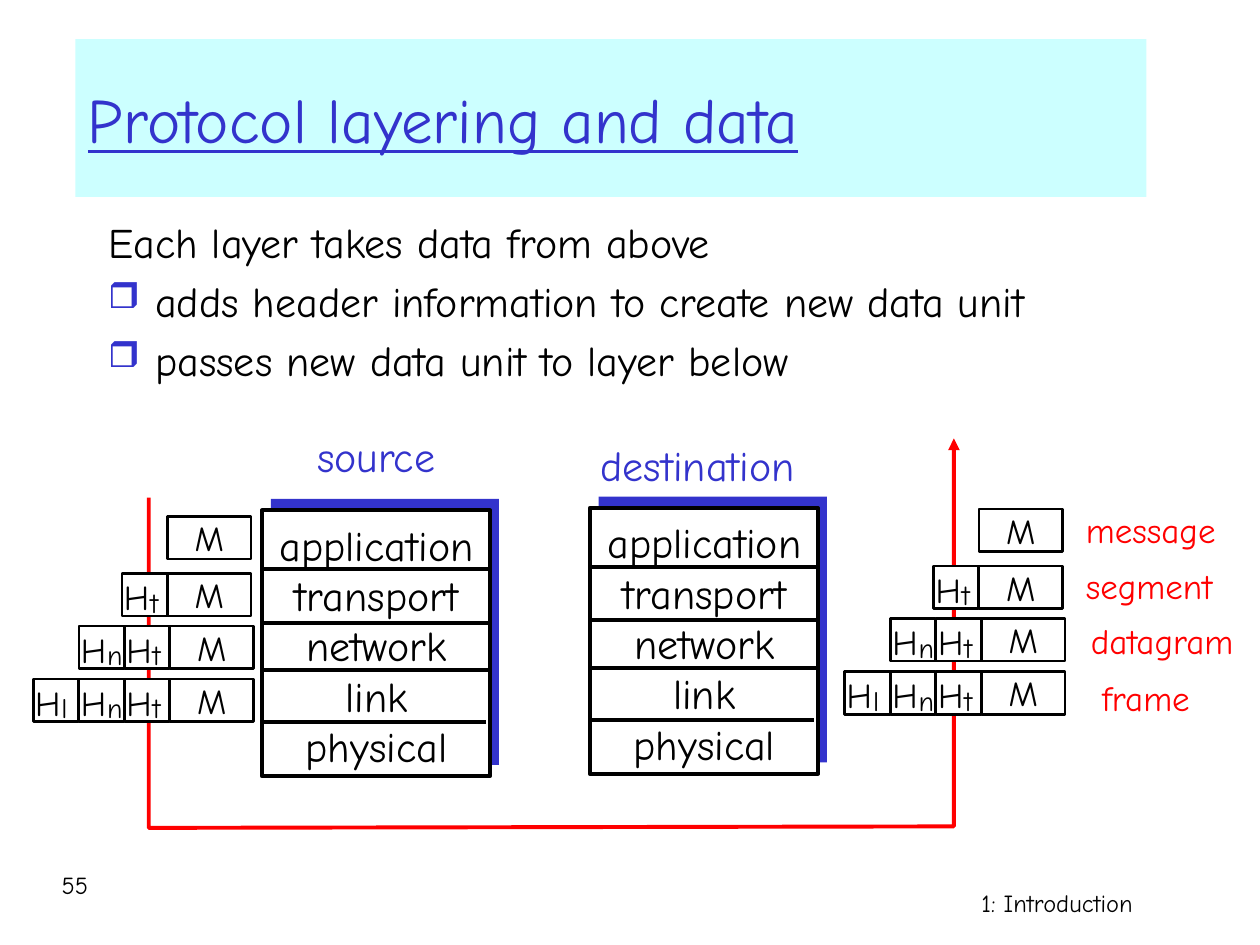
"""Build a slide on protocol layering and the data units of each layer."""
import pptx
import pptx.dml.color
import pptx.enum.shapes
import pptx.enum.text
import pptx.oxml
import pptx.oxml.ns
import pptx.util
from lxml import etree

Cm, Pt = pptx.util.Cm, pptx.util.Pt
RGBColor = pptx.dml.color.RGBColor
ALIGN = pptx.enum.text.PP_ALIGN
ANCHOR = pptx.enum.text.MSO_ANCHOR
qn = pptx.oxml.ns.qn

BLUE = RGBColor(0x33, 0x33, 0xCC)
CYAN = RGBColor(0xCC, 0xFF, 0xFF)
RED = RGBColor(0xFF, 0, 0)
BLACK = RGBColor(0, 0, 0)
WHITE = RGBColor(0xFF, 0xFF, 0xFF)
FONT = "Comic Neue"

TITLE = "Protocol layering and data"
BODY = [
    "Each layer takes data from above",
    "adds header information to create new data unit",
    "passes new data unit to layer below",
]
LAYERS = ["application", "transport", "network", "link", "physical"]
HOSTS = [
    ("source", (6.15, 8.56, 3.12, 1.27), (5.28, 10.29)),
    ("destination", (11.86, 8.74, 4.93, 1.27), (11.89, 10.24)),
]
DIVIDERS = [(0, 1.19), (0.05, 2.26), (0.05, 3.22), (-0.03, 4.27)]
PACKETS = [
    (3.38, 10.41, ""),
    (3.38, 11.56, "t"),
    (3.43, 12.62, "tn"),
    (3.43, 13.69, "tnl"),
]
PACKET_SHIFTS = [(0, 0), (16.36, -0.15)]
UNITS = [
    ("message", 21.64, 10.13, 3.25),
    ("segment", 21.64, 11.25, 3.25),
    ("datagram", 21.74, 12.37, 3.61),
    ("frame", 21.97, 13.51, 2.51),
]
ROUTE = [(3, 10.03), (3, 16.69), (19.23, 16.66), (19.23, 8.84)]
STACK_WIDTH, STACK_HEIGHT = 4.6, 5.36
MESSAGE_WIDTH, HEADER_WIDTH, PACKET_HEIGHT, HEADER_PITCH = 1.68, 0.91, 0.86, 0.92


def write_text(shape, lines, size=24, color=BLACK, align=ALIGN.LEFT,
               anchor=ANCHOR.TOP, wrap=False, underline=None, space=None):
    frame = shape.text_frame
    frame.word_wrap = wrap
    frame.vertical_anchor = anchor
    for index, line in enumerate(lines):
        paragraph = frame.add_paragraph() if index else frame.paragraphs[0]
        paragraph.alignment = align
        if space is not None:
            paragraph.space_before = Pt(space)
        run = paragraph.add_run()
        run.text = line
        run.font.name = FONT
        run.font.size = Pt(size)
        run.font.color.rgb = color
        run.font.underline = underline
    return frame


def add_label(shapes, box, lines, **text_format):
    label = shapes.add_textbox(*map(Cm, box))
    return write_text(label, lines, **text_format)


def add_rectangle(shapes, box, fill, line_width=None):
    rectangle = shapes.add_shape(
        pptx.enum.shapes.MSO_SHAPE.RECTANGLE, *map(Cm, box))
    rectangle.shadow.inherit = False
    rectangle.fill.solid()
    rectangle.fill.fore_color.rgb = fill
    if line_width:
        rectangle.line.color.rgb = BLACK
        rectangle.line.width = Pt(line_width)
    else:
        rectangle.line.fill.background()
    return rectangle


def add_bullet(paragraph):
    properties = paragraph._p.get_or_add_pPr()
    color = etree.SubElement(properties, qn("a:buClr"))
    etree.SubElement(color, qn("a:srgbClr"), val=str(BLUE))
    etree.SubElement(properties, qn("a:buSzPct"), val="85000")
    etree.SubElement(properties, qn("a:buChar"), char="❒")


def add_body(shapes):
    frame = add_label(shapes, (1.93, 4.24, 21.59, 4.22), BODY, wrap=True, space=4.8)
    for index, paragraph in enumerate(frame.paragraphs):
        properties = paragraph._p.get_or_add_pPr()
        properties.set("marL", str(Cm(0.95)))
        properties.set("indent", str(-Cm(0.95)))
        if index:
            add_bullet(paragraph)


def add_stack(shapes, left, top):
    add_rectangle(shapes, (left + 0.18, top - 0.23, STACK_WIDTH, STACK_HEIGHT), BLUE)
    add_rectangle(shapes, (left, top, STACK_WIDTH, STACK_HEIGHT), WHITE, 2.25)
    for x, y in DIVIDERS:
        ends = (left + x, top + y, left + x + 4.55, top + y)
        divider = shapes.add_connector(
            pptx.enum.shapes.MSO_CONNECTOR.STRAIGHT, *map(Cm, ends))
        divider.line.color.rgb = BLACK
        divider.line.width = Pt(2.25)
        etree.SubElement(divider._element.spPr, qn("a:effectLst"))
    add_label(shapes, (left - 0.05, top + 0.05, 4.72, 5.33), LAYERS,
              align=ALIGN.CENTER)


def add_route(shapes):
    points = [(Cm(x), Cm(y)) for x, y in ROUTE]
    builder = shapes.build_freeform(*points[0])
    builder.add_line_segments(points[1:], close=False)
    route = builder.convert_to_shape()
    route.shadow.inherit = False
    route.fill.background()
    route.line.color.rgb = RED
    route.line.width = Pt(2.25)
    etree.SubElement(route.line._get_or_add_ln(), qn("a:tailEnd"), type="triangle")


def add_packet(shapes, left, top, headers):
    message = add_rectangle(
        shapes, (left, top, MESSAGE_WIDTH, PACKET_HEIGHT), WHITE, 1.5)
    write_text(message, ["M"], size=20, align=ALIGN.CENTER, anchor=ANCHOR.MIDDLE)
    for position, subscript in enumerate(headers, start=1):
        x = left - position * HEADER_PITCH
        add_rectangle(shapes, (x, top, HEADER_WIDTH, PACKET_HEIGHT), WHITE, 1.5)
        add_label(shapes, (x - 0.21, top - 0.08, 0.86, 1.09), ["H"], size=20, wrap=True)
        add_label(shapes, (x + 0.32, top + 0.11, 0.81, 0.94), [subscript],
                  size=16, wrap=True)


def main():
    presentation = pptx.Presentation()
    presentation.slide_width, presentation.slide_height = Cm(25.4), Cm(19.05)
    slide = presentation.slides.add_slide(presentation.slide_layouts[6])
    shapes = slide.shapes

    add_label(shapes, (15.04, 17.78, 8.05, 1.27), ["1: Introduction"],
              size=14, align=ALIGN.RIGHT, wrap=True)
    add_label(shapes, (0.79, 17.42, 1.24, 1.09), ["55"],
              size=14, align=ALIGN.RIGHT, wrap=True)
    title = add_rectangle(shapes, (1.52, 0.79, 21.59, 3.18), CYAN)
    write_text(title, [TITLE], size=36, color=BLUE, anchor=ANCHOR.MIDDLE,
               wrap=True, underline=True)
    add_body(shapes)

    for name, name_box, corner in HOSTS:
        add_stack(shapes.add_group_shape().shapes, *corner)
        add_label(shapes, name_box, [name], color=BLUE)
    add_route(shapes)
    for shift_x, shift_y in PACKET_SHIFTS:
        group = shapes.add_group_shape()
        for left, top, headers in PACKETS:
            add_packet(group.shapes, left + shift_x, top + shift_y, headers)
    for name, left, top, width in UNITS:
        add_label(shapes, (left, top, width, 1.09), [name], size=20, color=RED)

    presentation.save("out.pptx")


if __name__ == "__main__":
    main()
